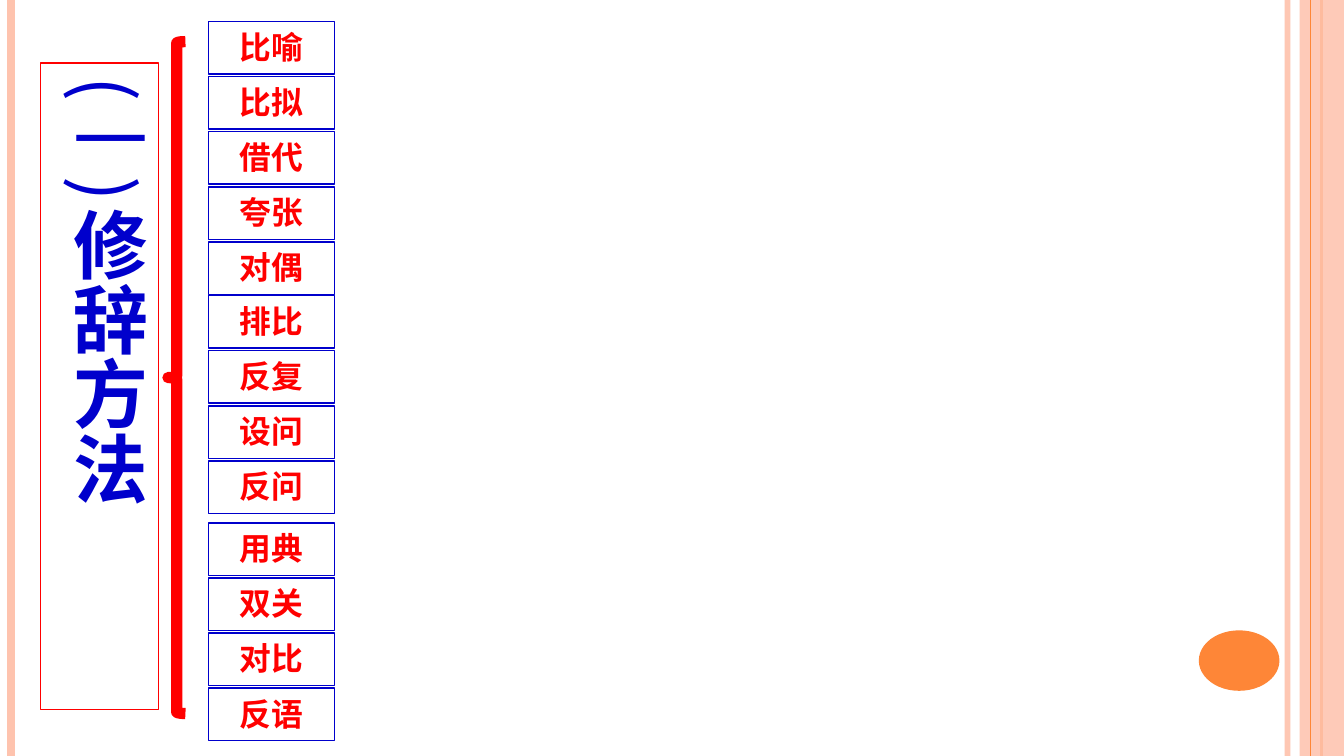
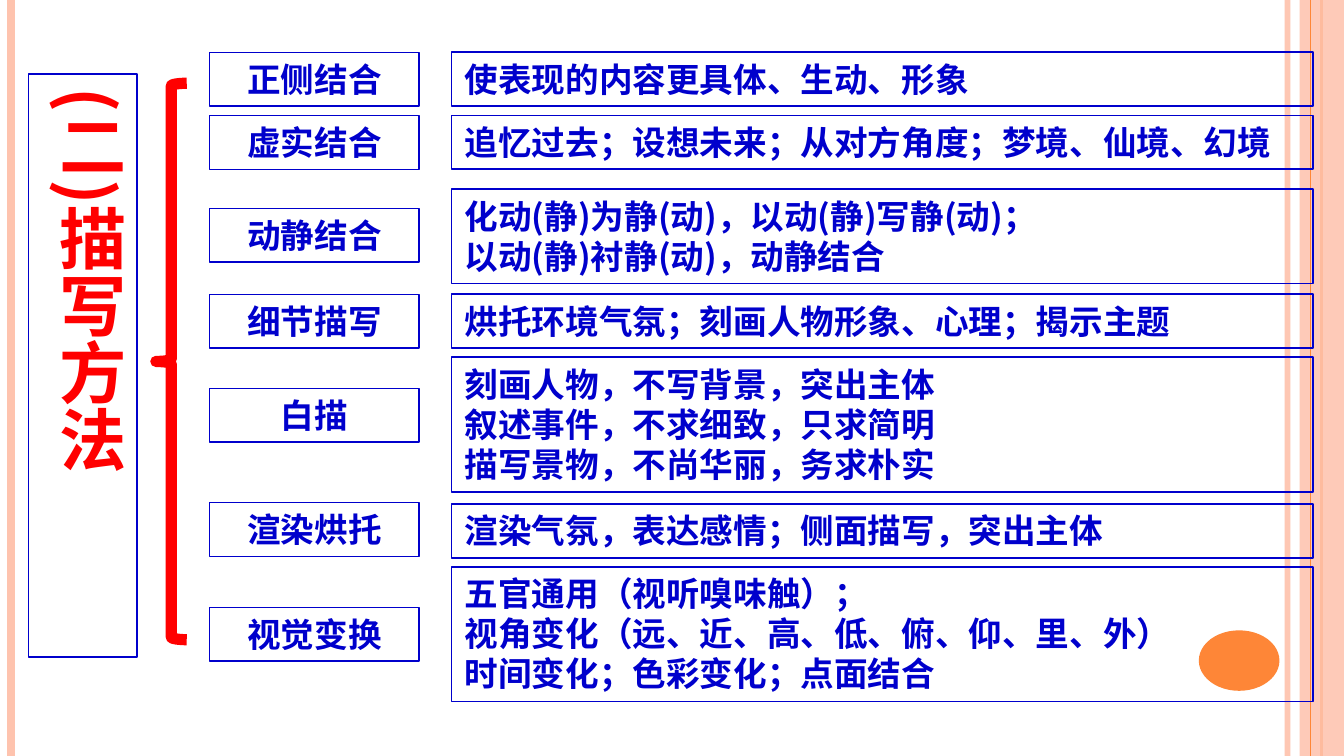
"""Build two slides on rhetorical devices and methods of description."""
from lxml import etree
from pptx import Presentation
from pptx.dml.color import RGBColor as Rgb
from pptx.enum.shapes import MSO_CONNECTOR as Link, MSO_SHAPE as Kind
from pptx.enum.text import MSO_AUTO_SIZE as Fit, PP_ALIGN as Align
from pptx.oxml.ns import qn
from pptx.util import Inches as In, Pt

PEACH = Rgb(0xFE, 0xC3, 0xAE)
ORANGE = Rgb(0xFE, 0x86, 0x37)
RED = Rgb(0xFF, 0, 0)
BLUE = Rgb(0, 0, 0xCC)
SANS = "Noto Sans CJK SC"
TALL = "Noto Sans CJK JP"
WIDE = 10
HIGH = WIDE * 9 / 16
LEAD = 1.19


def box(slide, area, text, size, ink, edge, width=0.75, align=Align.CENTER, tall=False):
    """Add a framed text box and return its first paragraph."""
    shape = slide.shapes.add_textbox(*map(In, area))
    shape.line.color.rgb = edge
    shape.line.width = Pt(width)
    frame = shape.text_frame
    frame.word_wrap = True
    frame.auto_size = Fit.SHAPE_TO_FIT_TEXT
    frame.text = text
    if tall:
        frame._txBody.bodyPr.set("vert", "eaVert")
    for para in frame.paragraphs:
        para.alignment = align
        para.line_spacing = Pt(round(size * LEAD, 1))
        font = para.font
        font.size, font.bold, font.color.rgb = Pt(size), True, ink
        font.name = TALL if tall else SANS
        props = para._p.pPr.find(qn("a:defRPr"))
        etree.SubElement(props, qn("a:ea")).set("typeface", font.name)
    return frame.paragraphs[0]


def brace(slide, *area):
    """Add a thick red left brace."""
    shape = slide.shapes.add_shape(Kind.LEFT_BRACE, *map(In, area))
    shape.shadow.inherit = False
    shape.fill.background()
    shape.line.color.rgb = RED
    shape.line.width = Pt(6)


deck = Presentation()
deck.slide_width, deck.slide_height = In(WIDE), In(HIGH)
blank = deck.slide_layouts[6]
for holder in list(blank.placeholders):
    holder.element.getparent().remove(holder.element)
first, second = [deck.slides.add_slide(blank) for _ in range(2)]

decor = []
for kind, area, tint, width, share in [
    (None, (9.58, 0, 9.58, HIGH), PEACH, 3, 93),
    (None, (0.08, 0, 0.08, HIGH), PEACH, 4.5, 100),
    (None, (9.83, 0, 9.83, HIGH), ORANGE, 1.5, 100),
    (Kind.RECTANGLE, (9.67, 0, 0.33, HIGH), PEACH, 0, 87),
    (None, (9.75, 0, 9.75, HIGH), ORANGE, 0.75, 100),
    (Kind.OVAL, (8.92, 4.69, 0.6, 0.45), ORANGE, 0, 100),
]:
    if kind is None:
        shape = first.shapes.add_connector(Link.STRAIGHT, *map(In, area))
        shape.line.color.rgb = tint
        shape.line.width = Pt(width)
        etree.SubElement(shape.element.spPr, qn("a:effectLst"))
    else:
        shape = first.shapes.add_shape(kind, *map(In, area))
        shape.shadow.inherit = False
        shape.fill.solid()
        shape.fill.fore_color.rgb = tint
        shape.line.fill.background()
    if share < 100:
        node = shape.element.spPr.find(".//" + qn("a:srgbClr"))
        etree.SubElement(node, qn("a:alpha")).set("val", str(share * 1000))
    decor.append(shape)
for shape in decor:
    blank.shapes.element.append(shape.element)

title = box(first, (0.3, 0.47, 0.88, 4.81), "(一)", 40, BLUE, RED, tall=True)
title.runs[0].font.bold = False
for text, size in [(" ", 16), ("修辞方法", 40)]:
    run = title.add_run()
    run.text = text
    run.font.size = Pt(size)
    run.font.bold = size == 40
for top, terms in [
    (0.16, "比喻 比拟 借代 夸张 对偶"),
    (2.2, "排比 反复 设问 反问"),
    (3.89, "用典 双关 对比 反语"),
]:
    for i, term in enumerate(terms.split()):
        box(first, (1.55, top + i * 0.41, 0.94, 0.39), term, 17, RED, BLUE)
brace(first, 1.25, 0.31, 0.13, 5)

rows = [
    (0.39, 0.39, "正侧结合", "使表现的内容更具体、生动、形象"),
    (0.86, 0.86, "虚实结合", "追忆过去；设想未来；从对方角度；梦境、仙境、幻境"),
    (1.55, 1.41, "动静结合", "化动(静)为静(动)，以动(静)写静(动)；\n以动(静)衬静(动)，动静结合"),
    (2.19, 2.19, "细节描写", "烘托环境气氛；刻画人物形象、心理；揭示主题"),
    (2.89, 2.66, "白描",
     "刻画人物，不写背景，突出主体\n叙述事件，不求细致，只求简明\n描写景物，不尚华丽，务求朴实"),
    (3.74, 3.75, "渲染烘托", "渲染气氛，表达感情；侧面描写，突出主体"),
    (4.52, 4.22, "视觉变换",
     "五官通用（视听嗅味触）；\n视角变化（远、近、高、低、俯、仰、里、外）\n时间变化；色彩变化；点面结合"),
]
for top, _, name, _ in rows:
    box(second, (1.56, top, 1.56, 0.4), name, 18, BLUE, BLUE)
for _, top, _, use in rows:
    deep = 0.4 + 0.3 * use.count("\n")
    box(second, (3.36, top, 6.41, deep), use, 18, BLUE, BLUE, 1, Align.LEFT)
brace(second, 1.16, 0.62, 0.23, 4.14)
box(second, (0.21, 0.55, 0.81, 4.34), "(二)描写方法", 36, RED, BLUE, tall=True)

deck.save("out.pptx")
